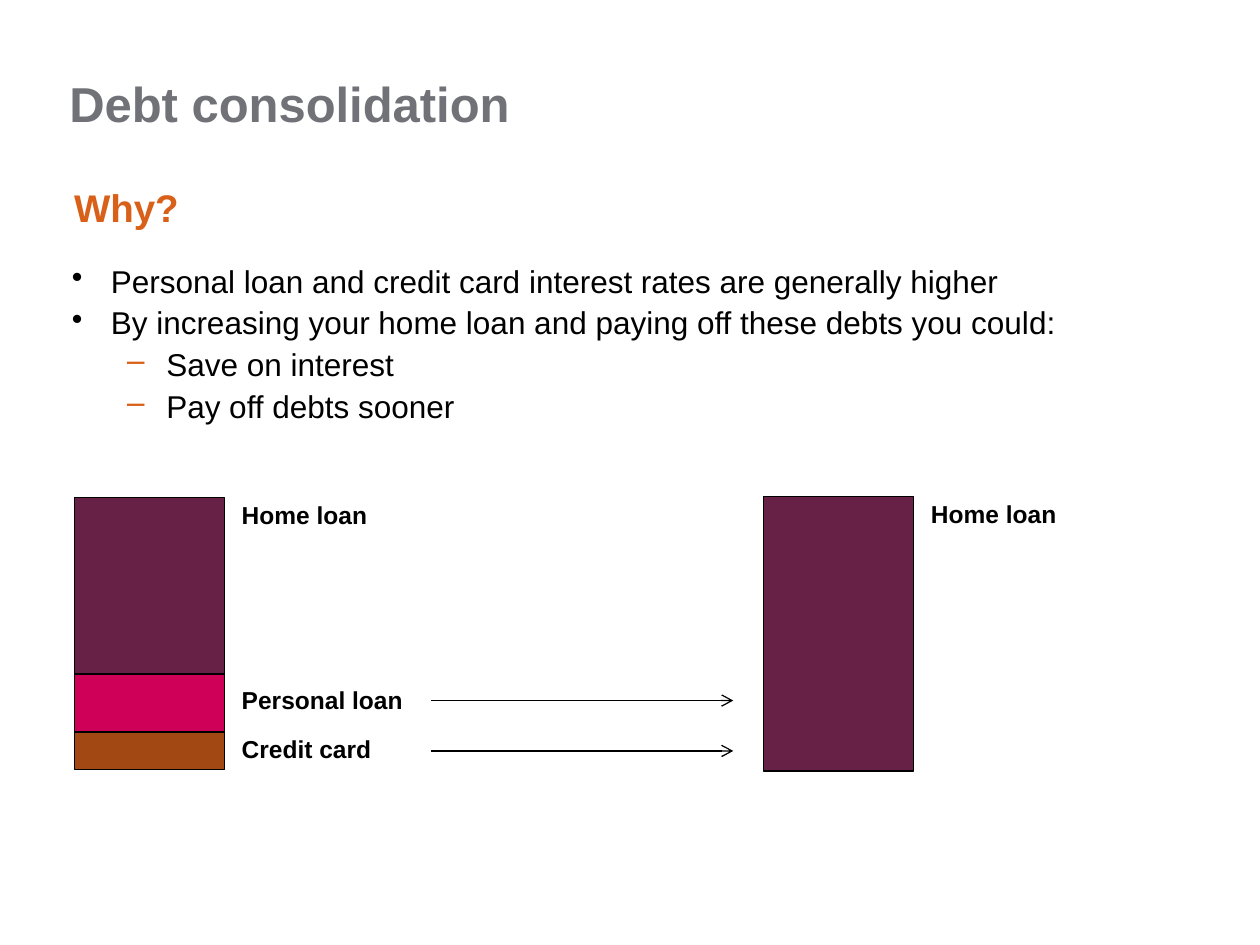
import pptx
import pptx.util
import pptx.dml.color
import pptx.enum.shapes
import pptx.enum.text
import pptx.oxml.ns
import lxml.etree

RGB = pptx.dml.color.RGBColor
Inches, Pt = pptx.util.Inches, pptx.util.Pt

GREY = RGB(0x71, 0x72, 0x78)
ORANGE = RGB(0xD8, 0x60, 0x18)
BLACK = RGB(0, 0, 0)
PLUM = RGB(0x67, 0x21, 0x46)
PINK = RGB(0xCE, 0x00, 0x58)
BROWN = RGB(0xA2, 0x48, 0x12)

TITLE = "Debt consolidation"
HEAD = "Why?"
POINTS = [
    (0, "Personal loan and credit card interest rates are generally higher"),
    (0, "By increasing your home loan and paying off these debts you could:"),
    (1, "Save on interest"),
    (1, "Pay off debts sooner"),
]
LEVELS = [("•", BLACK, 0.31), ("–", ORANGE, 0.75)]
HANG = 0.31

BEFORE, AFTER, BAR = 0.59, 6.06, 1.19
BARS = [
    (BEFORE, 3.95, 1.4, PLUM),
    (BEFORE, 5.35, 0.46, PINK),
    (BEFORE, 5.81, 0.3, BROWN),
    (AFTER, 3.94, 2.18, PLUM),
]
GAP = 0.04
LABELS = [
    ("Home loan", BEFORE, 3.92, 1.2),
    ("Personal loan", BEFORE, 5.39, 1.49),
    ("Credit card", BEFORE, 5.78, 1.24),
    ("Home loan", AFTER, 3.91, 1.2),
]
ARROWS = (3.42, 5.82)
ROWS = [5.56, 5.96]


def add_xml(parent, tag, **attrs):
    return lxml.etree.SubElement(parent, pptx.oxml.ns.qn(tag), attrs)


def style(par, size, color, bold=False):
    font = par.font
    font.name, font.size, font.bold = "Arial", Pt(size), bold
    font.color.rgb = color


def add_box(slide, left, top, width, height, wrap=True, inset=True):
    box = slide.shapes.add_textbox(*map(Inches, (left, top, width, height)))
    frame = box.text_frame
    frame.word_wrap = wrap
    if not inset:
        frame.margin_left = frame.margin_right = 0
        frame.margin_top = frame.margin_bottom = 0
    return frame


def add_line(slide, text, size, color, *place, **opts):
    par = add_box(slide, *place, **opts).paragraphs[0]
    par.text = text
    style(par, size, color, True)


def add_points(slide):
    frame = add_box(slide, 0.57, 2.11, 8.6, 1.76, inset=False)
    for i, (level, text) in enumerate(POINTS):
        par = frame.add_paragraph() if i else frame.paragraphs[0]
        par.text, par.level = text, level
        par.line_spacing, par.space_after = 0.9, Pt(4.4)
        style(par, 18, BLACK)
        mark, color, left = LEVELS[level]
        props = par._p.get_or_add_pPr()
        props.set("marL", str(Inches(left)))
        props.set("indent", str(-Inches(HANG)))
        tint = pptx.oxml.ns.qn("a:buClr")
        node = lxml.etree.Element(tint)
        add_xml(node, "a:srgbClr", val=str(color))
        char = lxml.etree.Element(pptx.oxml.ns.qn("a:buChar"), char=mark)
        rest = props.find(pptx.oxml.ns.qn("a:defRPr"))
        for item in (node, char):
            if rest is None:
                props.append(item)
            else:
                rest.addprevious(item)


def add_bar(slide, left, top, height, color):
    bar = slide.shapes.add_shape(
        pptx.enum.shapes.MSO_SHAPE.RECTANGLE,
        *map(Inches, (left, top, BAR, height)))
    bar.shadow.inherit = False
    bar.fill.solid()
    bar.fill.fore_color.rgb = color
    bar.line.color.rgb = BLACK
    bar.line.width = Pt(0.75)


def add_arrow(slide, row):
    start, end = ARROWS
    arrow = slide.shapes.add_connector(
        pptx.enum.shapes.MSO_CONNECTOR.STRAIGHT,
        *map(Inches, (start, row, end, row)))
    arrow.line.color.rgb = BLACK
    arrow.line.width = Pt(0.75)
    add_xml(arrow.line._get_or_add_ln(), "a:tailEnd", type="arrow")
    add_xml(arrow._element.spPr, "a:effectLst")


def main():
    deck = pptx.Presentation()
    deck.slide_width, deck.slide_height = Inches(10), Inches(7.5)
    slide = deck.slides.add_slide(deck.slide_layouts[6])
    add_line(slide, TITLE, 28, GREY, 0.55, 0.58, 7.1, 0.4, inset=False)
    add_points(slide)
    add_line(slide, HEAD, 22, ORANGE, 0.49, 1.41, 1.04, 0.47, wrap=False)
    for bar in BARS:
        add_bar(slide, *bar)
    for text, left, top, width in LABELS:
        add_line(slide, text, 14, BLACK, left + BAR + GAP, top, width, 0.34,
                 wrap=False)
    for row in ROWS:
        add_arrow(slide, row)
    deck.save("out.pptx")


if __name__ == "__main__":
    main()
